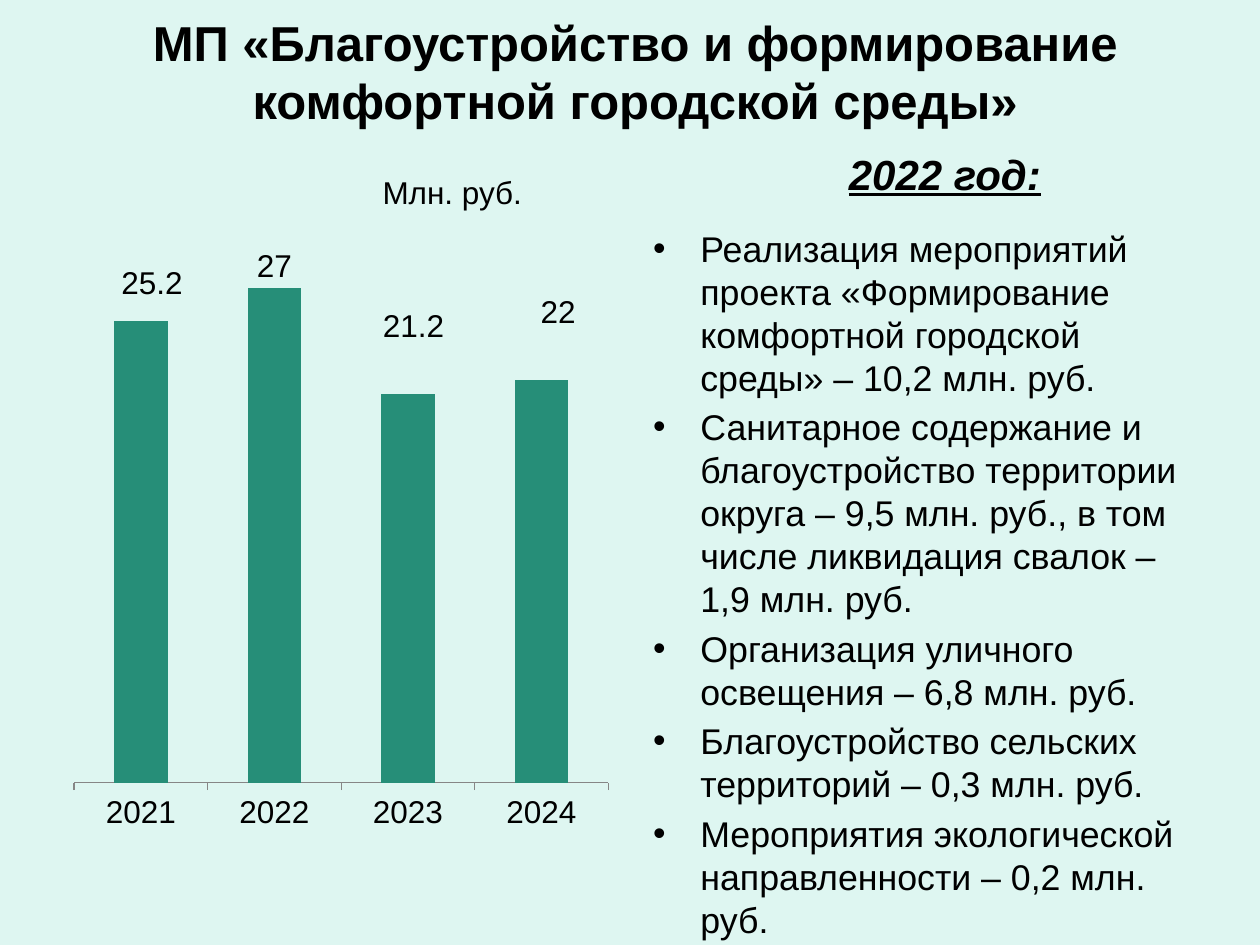
import pptx
import pptx.chart.data
import pptx.dml.color
import pptx.enum.chart
import pptx.enum.text
import pptx.oxml
import pptx.oxml.ns
import pptx.util

Pt = pptx.util.Pt
BLACK = pptx.dml.color.RGBColor(0x00, 0x00, 0x00)
MINT = pptx.dml.color.RGBColor(0xDE, 0xF6, 0xF1)
GREEN = pptx.dml.color.RGBColor(0x26, 0x8E, 0x78)
GREY = pptx.dml.color.RGBColor(0x86, 0x86, 0x86)
FONT = "Arial"

YEARS = ["2021", "2022", "2023", "2024"]
SPENDING = [25.2, 27, 21.2, 22]
LABEL_SHIFTS = [(0.02, -0.43), (0, -0.43), (0.01, -0.42), (0.03, -0.43)]
MEASURES = [
    "Реализация мероприятий проекта «Формирование комфортной городской среды» – 10,2 млн. руб.",
    "Санитарное содержание и благоустройство территории округа – 9,5 млн. руб., "
    "в том числе ликвидация свалок – 1,9 млн. руб.",
    "Организация уличного освещения – 6,8 млн. руб.",
    "Благоустройство сельских территорий – 0,3 млн. руб.",
    "Мероприятия экологической направленности – 0,2 млн. руб.",
]


def format_font(font, size, bold=False, italic=False, underline=False):
    font.name = FONT
    font.size = Pt(size)
    font.bold = bold
    font.italic = italic
    font.underline = underline
    font.color.rgb = BLACK


def move(shape, box):
    shape.left, shape.top, shape.width, shape.height = [Pt(length) for length in box]


def write_centred(shape, text, size, **style):
    frame = shape.text_frame
    frame.word_wrap = True
    frame.auto_size = pptx.enum.text.MSO_AUTO_SIZE.NONE
    frame.vertical_anchor = pptx.enum.text.MSO_ANCHOR.MIDDLE
    para = frame.paragraphs[0]
    para.alignment = pptx.enum.text.PP_ALIGN.CENTER
    span = para.add_run()
    span.text = text
    format_font(span.font, size, **style)


def place_title(page, box):
    title = page.shapes.title
    move(title, box)
    write_centred(title, "МП «Благоустройство и формирование комфортной городской среды»", 28, bold=True)


def place_caption(page, box, text, size, **style):
    caption = page.shapes.add_textbox(*[Pt(length) for length in box])
    write_centred(caption, text, size, **style)


def place_measures(page, box):
    body = page.placeholders[1]
    move(body, box)
    frame = body.text_frame
    frame.word_wrap = True
    frame.auto_size = pptx.enum.text.MSO_AUTO_SIZE.NONE
    for number, measure in enumerate(MEASURES):
        para = frame.add_paragraph() if number else frame.paragraphs[0]
        para.space_before = Pt(4)
        properties = para._p.get_or_add_pPr()
        properties.set("marL", str(Pt(27)))
        properties.set("indent", str(-Pt(27)))
        span = para.add_run()
        span.text = measure
        format_font(span.font, 20.4)


def make_layout(**values):
    parts = "".join(f'<c:{name} val="{value}"/>' for name, value in values.items())
    return pptx.oxml.parse_xml(
        f'<c:layout {pptx.oxml.ns.nsdecls("c")}><c:manualLayout>{parts}</c:manualLayout></c:layout>'
    )


def place_labels(series):
    labels = series.data_labels
    labels.show_value = True
    for leader in labels._element.findall(pptx.oxml.ns.qn("c:showLeaderLines")):
        leader.set("val", "0")
    for number, (x, y) in enumerate(LABEL_SHIFTS):
        format_font(series.points[number].data_label.font, 18)
        label = labels._element.findall(pptx.oxml.ns.qn("c:dLbl"))[number]
        label.insert(1, make_layout(x=x, y=y))


def place_chart(page, box):
    data = pptx.chart.data.CategoryChartData()
    data.categories = YEARS
    data.add_series("Series 1", SPENDING)
    kind = pptx.enum.chart.XL_CHART_TYPE.COLUMN_STACKED
    chart = page.shapes.add_chart(kind, *[Pt(length) for length in box], data).chart
    chart.has_legend = False
    chart.has_title = False
    format_font(chart.font, 18)

    years = chart.category_axis
    years.major_tick_mark = pptx.enum.chart.XL_TICK_MARK.OUTSIDE
    years.format.line.color.rgb = GREY
    amounts = chart.value_axis
    amounts.minimum_scale, amounts.maximum_scale = 0, 30
    amounts.has_major_gridlines = False
    amounts.visible = False

    area = chart._chartSpace.chart.plotArea
    for old in area.findall(pptx.oxml.ns.qn("c:layout")):
        area.remove(old)
    area.insert(0, make_layout(layoutTarget="inner", xMode="edge", yMode="edge", x=0.02, y=0.02, w=0.96, h=0.88))

    plot = chart.plots[0]
    plot.gap_width, plot.overlap, plot.vary_by_categories = 150, 100, False
    series = plot.series[0]
    series.format.fill.solid()
    series.format.fill.fore_color.rgb = GREEN
    place_labels(series)


def build():
    deck = pptx.Presentation()
    deck.slide_width, deck.slide_height = Pt(720), Pt(540)
    page = deck.slides.add_slide(deck.slide_layouts[1])
    page.background.fill.solid()
    page.background.fill.fore_color.rgb = MINT
    place_title(page, (18, 18, 690, 45))
    place_chart(page, (36, 126, 318, 357))
    place_measures(page, (366, 126, 318, 357))
    place_caption(page, (468, 78, 144, 42), "2022 год:", 24, bold=True, italic=True, underline=True)
    place_caption(page, (207.5, 99, 102, 21), "Млн. руб.", 18)
    deck.save("out.pptx")


if __name__ == "__main__":
    build()
